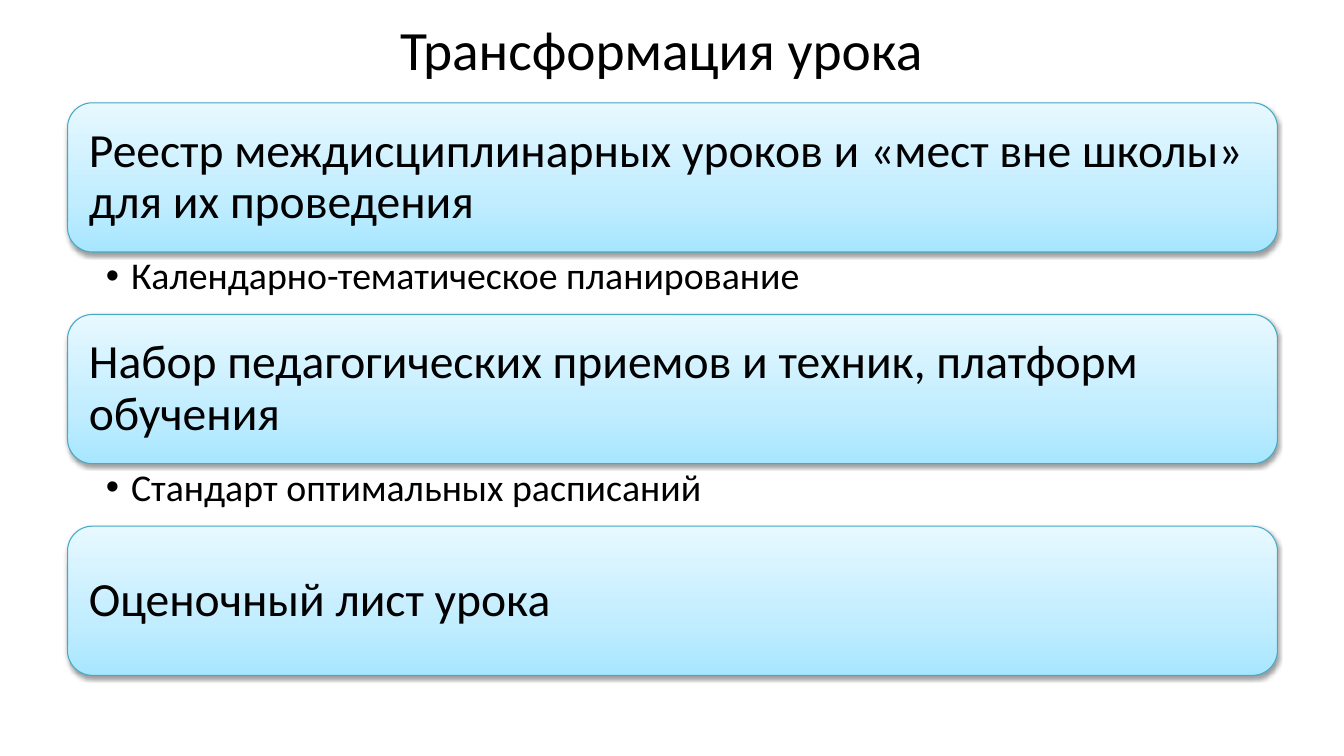
import copy

import lxml.etree
import pptx
import pptx.dml.color
import pptx.enum.shapes
import pptx.enum.text
import pptx.oxml.ns
import pptx.util

Inches, Pt = pptx.util.Inches, pptx.util.Pt
qn = pptx.oxml.ns.qn
ANCHOR, ALIGN = pptx.enum.text.MSO_ANCHOR, pptx.enum.text.PP_ALIGN

COLORS = {"text": "000000", "outline": "46AAC5", "shadow": "000000",
          "deep": "A7E6FF", "middle": "C1EDFF", "pale": "E7F8FF"}
GRADIENT = [(0, "deep"), (0.35, "middle"), (1, "pale")]
SECTIONS = [
    ("Реестр междисциплинарных уроков и «мест вне школы» для их проведения",
     "Календарно-тематическое планирование"),
    ("Набор педагогических приемов и техник, платформ обучения",
     "Стандарт оптимальных расписаний"),
    ("Оценочный лист урока", None),
]
LEFT, TOP, WIDTH = 0.67, 1.02, 12
PANEL_HEIGHT, DETAIL_HEIGHT = 1.48, 0.62


def rgb(name):
    return pptx.dml.color.RGBColor.from_string(COLORS[name])


def write(frame, text, size, anchor, align, insets):
    """Fill a text frame with one run; insets are left, top, right, bottom."""
    frame.word_wrap = True
    frame.auto_size = pptx.enum.text.MSO_AUTO_SIZE.NONE
    frame.vertical_anchor = anchor
    (frame.margin_left, frame.margin_top,
     frame.margin_right, frame.margin_bottom) = map(Inches, insets)
    paragraph = frame.paragraphs[0]
    paragraph.alignment = align
    run = paragraph.add_run()
    run.text = text
    run.font.name = "Calibri"
    run.font.size = Pt(size)
    run.font.color.rgb = rgb("text")
    return paragraph


presentation = pptx.Presentation()
presentation.slide_width = Inches(13.33)
presentation.slide_height = Inches(7.5)
slide = presentation.slides.add_slide(presentation.slide_layouts[5])

title = slide.shapes.title
title.left, title.top = Inches(0.56), Inches(0.17)
title.width, title.height = Inches(12), Inches(0.62)
write(title.text_frame, "Трансформация урока", 39.6,
      ANCHOR.MIDDLE, ALIGN.CENTER, (0.1, 0.05, 0.1, 0.05))

for index, (heading, detail) in enumerate(SECTIONS):
    top = TOP + index * (PANEL_HEIGHT + DETAIL_HEIGHT)
    panel = slide.shapes.add_shape(
        pptx.enum.shapes.MSO_SHAPE.ROUNDED_RECTANGLE,
        Inches(LEFT), Inches(top), Inches(WIDTH), Inches(PANEL_HEIGHT))
    panel.line.color.rgb = rgb("outline")
    panel.line.width = Pt(0.75)

    panel.fill.gradient()
    panel.fill.gradient_angle = 90
    stop_list = panel._element.spPr.find(qn("a:gradFill")).find(qn("a:gsLst"))
    stop_list.insert(1, copy.deepcopy(stop_list[0]))
    for stop, (position, color) in zip(panel.fill.gradient_stops, GRADIENT):
        stop.position = position
        stop.color.rgb = rgb(color)

    panel.shadow.inherit = False
    effects = panel._element.spPr.find(qn("a:effectLst"))
    shadow = lxml.etree.SubElement(
        effects, qn("a:outerShdw"), blurRad=str(Pt(3.1)), dist=str(Pt(1.6)),
        dir="5400000", rotWithShape="0")
    shade = lxml.etree.SubElement(shadow, qn("a:srgbClr"), val=COLORS["shadow"])
    lxml.etree.SubElement(shade, qn("a:alpha"), val="38000")

    paragraph = write(panel.text_frame, heading, 34,
                      ANCHOR.MIDDLE, ALIGN.LEFT, (0.14, 0.14, 0.14, 0.14))
    paragraph.line_spacing = 0.9

    if detail:
        note = slide.shapes.add_textbox(
            Inches(LEFT), Inches(top + PANEL_HEIGHT),
            Inches(WIDTH), Inches(DETAIL_HEIGHT))
        paragraph = write(note.text_frame, detail, 27,
                          ANCHOR.TOP, ALIGN.LEFT, (0.38, 0.05, 0.26, 0.05))
        paragraph.line_spacing = 0.9
        properties = paragraph._p.get_or_add_pPr()
        properties.set("marL", str(Inches(0.25)))
        properties.set("indent", str(Inches(-0.25)))
        lxml.etree.SubElement(properties, qn("a:buFont"), typeface="Arial")
        lxml.etree.SubElement(properties, qn("a:buChar"), char="•")

presentation.save("out.pptx")
